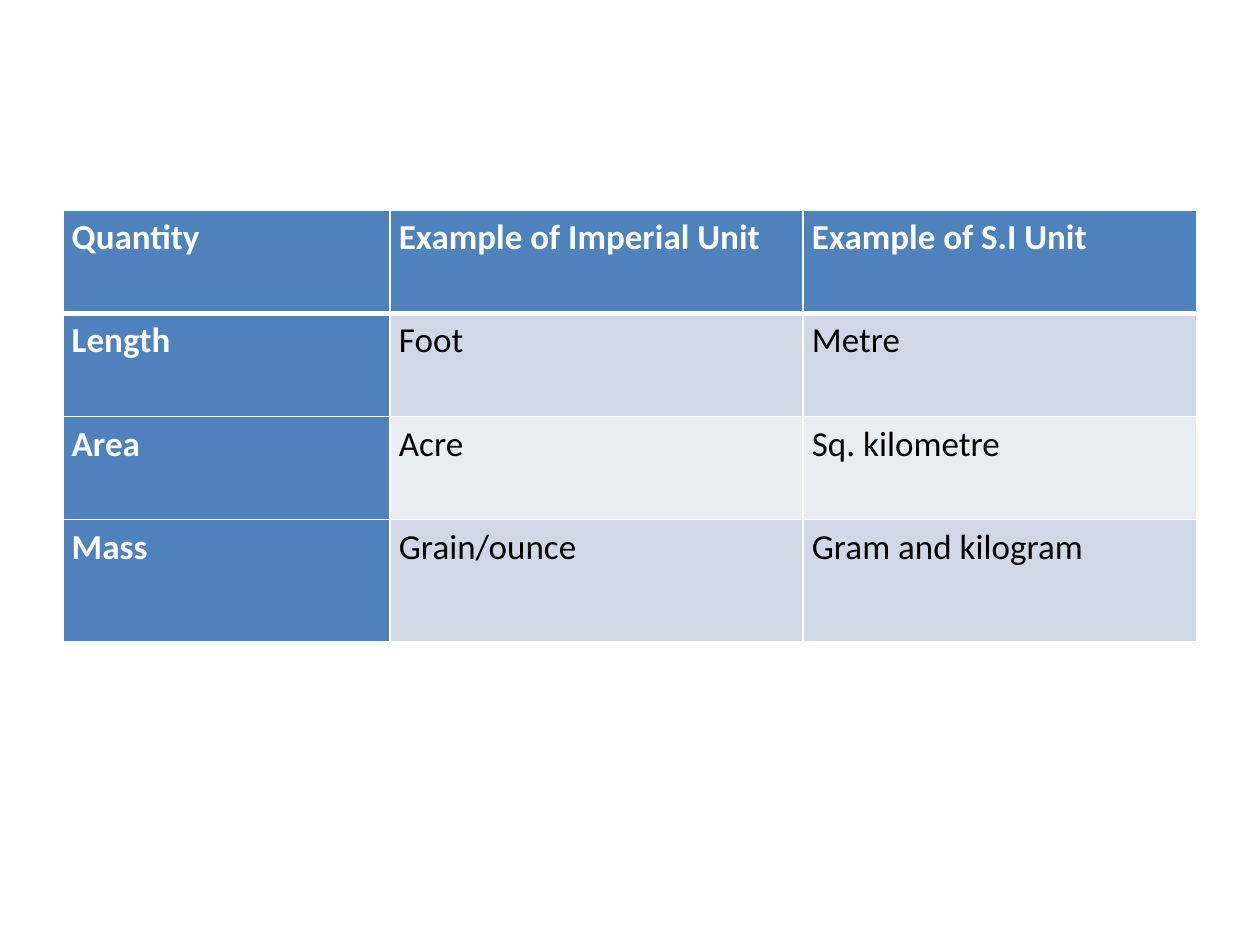
from lxml import etree
from pptx import Presentation
from pptx.dml.color import RGBColor
from pptx.oxml.ns import qn
from pptx.util import Pt

WHITE, BLACK, BLUE = "FFFFFF", "000000", "4F81BD"
BANDS = ["D0D8E8", "E9EDF4"]


def rgb(color):
    return RGBColor.from_string(color)


def add_border(cell, side, width):
    ln = etree.SubElement(cell._tc.get_or_add_tcPr(), qn(f"a:ln{side}"), w=str(Pt(width)))
    fill = etree.SubElement(ln, qn("a:solidFill"))
    etree.SubElement(fill, qn("a:srgbClr"), val=WHITE)


prs = Presentation()
prs.slide_width, prs.slide_height = Pt(720), Pt(540)
s = prs.slides.add_slide(prs.slide_layouts[6])

# Units table
rows = [
    ["Quantity", "Example of Imperial Unit", "Example of S.I Unit"],
    ["Length", "Foot", "Metre"],
    ["Area", "Acre", "Sq. kilometre"],
    ["Mass", "Grain/ounce", "Gram and kilogram"],
]
col_widths = [187, 236, 225]
row_heights = [59, 59, 59, 69.5]
table = s.shapes.add_table(len(rows), len(col_widths), Pt(36), Pt(120),
                           Pt(sum(col_widths)), Pt(sum(row_heights))).table
for column, width in zip(table.columns, col_widths):
    column.width = Pt(width)
for row, height in zip(table.rows, row_heights):
    row.height = Pt(height)

# Cells: blue header row and first column, banded body
for i, row in enumerate(rows):
    for j, text in enumerate(row):
        cell = table.cell(i, j)
        heading = i == 0 or j == 0
        cell.margin_left = cell.margin_right = Pt(5)
        cell.margin_top = cell.margin_bottom = 0

        # A thicker rule separates the header from the body
        widths = {"L": 1, "R": 1, "T": 3 if i == 1 else 1, "B": 3 if i == 0 else 1}
        for side, width in widths.items():
            add_border(cell, side, width)
        cell.fill.solid()
        cell.fill.fore_color.rgb = rgb(BLUE if heading else BANDS[(i - 1) % 2])

        p = cell.text_frame.paragraphs[0]
        p.text = text
        p.line_spacing = 1.15
        r = p.runs[0]
        r.font.name = "Calibri"
        r.font.size = Pt(20)
        r.font.bold = heading
        r.font.color.rgb = rgb(WHITE if heading else BLACK)

prs.save("out.pptx")
